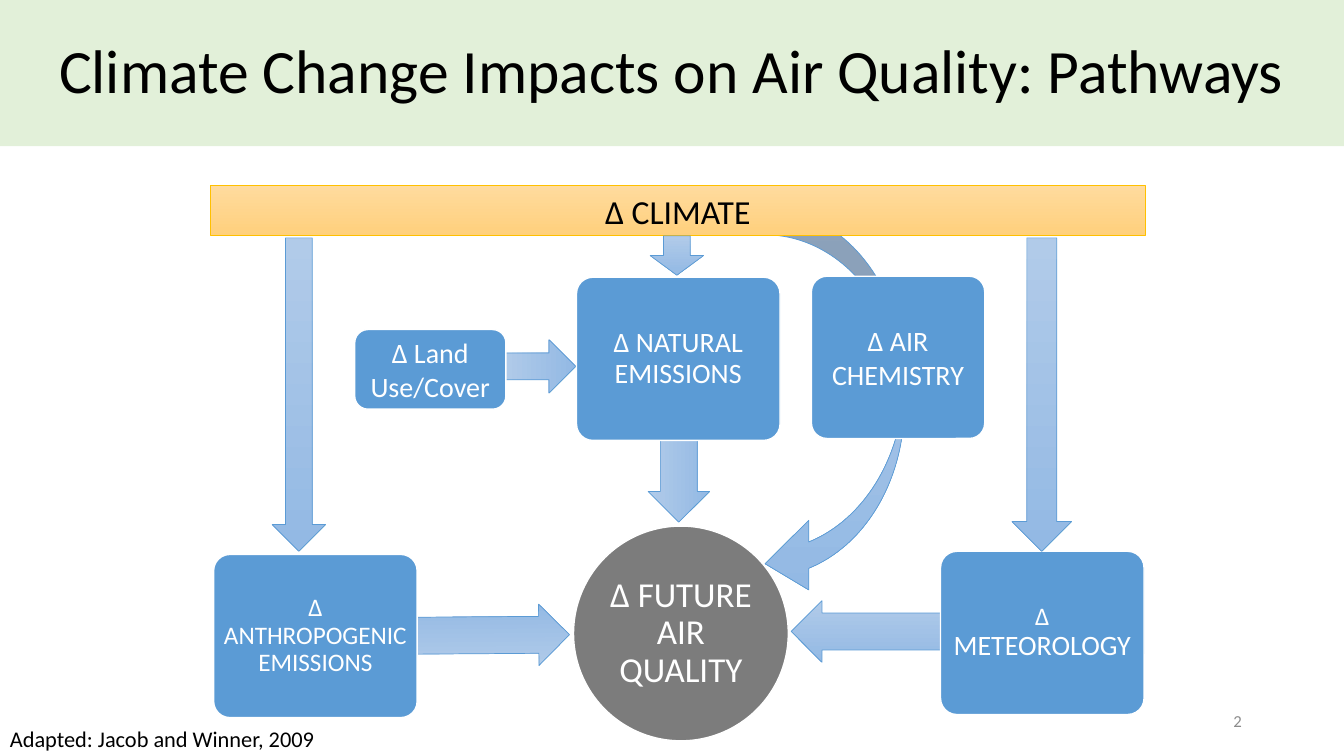
from pptx import Presentation
from pptx.dml.color import RGBColor
from pptx.enum.shapes import MSO_SHAPE
from pptx.enum.text import MSO_ANCHOR, PP_ALIGN
from pptx.util import Pt

RECT, ROUND, OVAL = MSO_SHAPE.RECTANGLE, MSO_SHAPE.ROUNDED_RECTANGLE, MSO_SHAPE.OVAL
DOWN, LEFT_ARROW = MSO_SHAPE.DOWN_ARROW, MSO_SHAPE.LEFT_ARROW
CURVED = MSO_SHAPE.CURVED_LEFT_ARROW
LEFT, CENTER, RIGHT = PP_ALIGN.LEFT, PP_ALIGN.CENTER, PP_ALIGN.RIGHT
MIDDLE, TOP = MSO_ANCHOR.MIDDLE, MSO_ANCHOR.TOP

FONT = "Calibri"
COLORS = {
    "black": "000000", "white": "FFFFFF", "gray": "7C7C7C", "number": "8C8C8C",
    "title": "E2F0D9", "blue": "5B9BD5", "gold": "FFC000",
    "arrow_top": "B1CBE9", "arrow_bottom": "93B9E4",
    "climate_top": "FFDB9E", "climate_bottom": "FFD07C",
}
BOX_SIZE = (145.4, 116.6)
FLOW_HEIGHT = 43.9  # arrows that lead to the circle


def rgb(name):
    return RGBColor.from_string(COLORS[name])


def write(s, *runs, size=20, color="white", align=CENTER, anchor=MIDDLE,
          spacing=1.0, inset=None):
    """Each run is a text, or a pair of text and size."""
    tf = s.text_frame
    tf.word_wrap = True
    tf.vertical_anchor = anchor
    if inset is not None:
        tf.margin_left = tf.margin_right = Pt(inset)
        tf.margin_top = tf.margin_bottom = Pt(inset)
    p = tf.paragraphs[0]
    p.alignment = align
    p.line_spacing = spacing
    for run in runs:
        text, run_size = (run, size) if isinstance(run, str) else run
        r = p.add_run()
        r.text = text
        r.font.name = FONT
        r.font.size = Pt(run_size)
        r.font.color.rgb = rgb(color)


def add_shape(slide, kind, x, y, w, h, fill, line=None, line_width=1, adj=()):
    """A pair of colours as fill gives a gradient from top to bottom."""
    s = slide.shapes.add_shape(kind, Pt(x), Pt(y), Pt(w), Pt(h))
    s.shadow.inherit = False
    for i, value in enumerate(adj):
        s.adjustments[i] = value
    if isinstance(fill, tuple):
        s.fill.gradient()
        s.fill.gradient_angle = 270
        for stop, name in zip(s.fill.gradient_stops, fill):
            stop.color.rgb = rgb(name)
    else:
        s.fill.solid()
        s.fill.fore_color.rgb = rgb(fill)
    if line:
        s.line.color.rgb = rgb(line)
        s.line.width = Pt(line_width)
    else:
        s.line.fill.background()
    return s


def add_arrow(slide, kind, x, y, w, h, rotation=0, adj=()):
    s = add_shape(slide, kind, x, y, w, h, ("arrow_top", "arrow_bottom"),
                  "blue", 0.5, adj)
    s.rotation = rotation


def add_flow(slide, x, y, length, rotation=0):
    add_arrow(slide, LEFT_ARROW, x, y, length, FLOW_HEIGHT, rotation, (0.6, 0.5))


def add_box(slide, x, y, *runs, size=20):
    s = add_shape(slide, ROUND, x, y, *BOX_SIZE, "blue", "white", adj=(0.1,))
    write(s, *runs, size=size, spacing=0.9, inset=3)


def add_label(slide, x, y, w, h, text, **fmt):
    write(slide.shapes.add_textbox(Pt(x), Pt(y), Pt(w), Pt(h)), text, **fmt)


def main():
    prs = Presentation()
    prs.slide_width, prs.slide_height = Pt(960), Pt(540)
    slide = prs.slides.add_slide(prs.slide_layouts[6])

    # Arrows that lie behind the boxes
    add_arrow(slide, DOWN, 365.8, 235.4, 38.2, 52.6, rotation=270)
    add_arrow(slide, CURVED, 546.5, 149, 99.4, 278.6, adj=(0.189, 0.5, 0.314))

    # Title band
    title = add_shape(slide, RECT, 0, 0, 960, 104.4, "title")
    write(title, "Climate Change Impacts on Air Quality: Pathways",
          size=44, color="black", spacing=0.9)

    # Future air quality and the three main drivers
    future = add_shape(slide, OVAL, 409.7, 375.8, 153.4, 153.4, "gray", "white")
    write(future, "Δ FUTURE AIR QUALITY", size=25, spacing=0.9, inset=1.4)
    add_flow(slide, 218.9, 432, 187.9, rotation=179.6)
    add_box(slide, 152.6, 396, "Δ ANTHROPOGENIC EMISSIONS", size=18)
    add_flow(slide, 428.4, 294.5, 113, rotation=270)
    add_box(slide, 411.8, 198, "Δ NATURAL EMISSIONS")
    add_flow(slide, 565.2, 429.1, 184.3)
    add_box(slide, 671.8, 393.8, ("Δ ", 18), "METEOROLOGY")

    # Climate bar
    climate = add_shape(slide, RECT, 150.5, 132.5, 667.4, 36,
                        ("climate_top", "climate_bottom"), "gold", 0.5)
    write(climate, "Δ CLIMATE", size=24, color="black", anchor=TOP)

    # Land use, air chemistry and the arrows down from climate
    land = add_shape(slide, ROUND, 253.4, 235.4, 108, 56.9, "blue", "white")
    write(land, "Δ Land Use/Cover")
    for x, y, w, h in ((464.4, 168.5, 38.2, 28.1),
                       (722.9, 169.9, 42.5, 223.9),
                       (194.4, 169.9, 38.2, 223.9)):
        add_arrow(slide, DOWN, x, y, w, h)
    air = add_shape(slide, ROUND, 579.6, 197.3, 123.8, 115.9, "blue", "white",
                    adj=(0.095,))
    write(air, "Δ AIR CHEMISTRY")

    # Slide number and source
    add_label(slide, 678.2, 500.4, 216, 28.8, "2",
              size=12, color="number", align=RIGHT)
    add_label(slide, 0, 514.1, 265, 26.6, "Adapted: Jacob and Winner, 2009",
              size=16, color="black", align=LEFT, anchor=TOP)

    prs.save("out.pptx")


if __name__ == "__main__":
    main()
